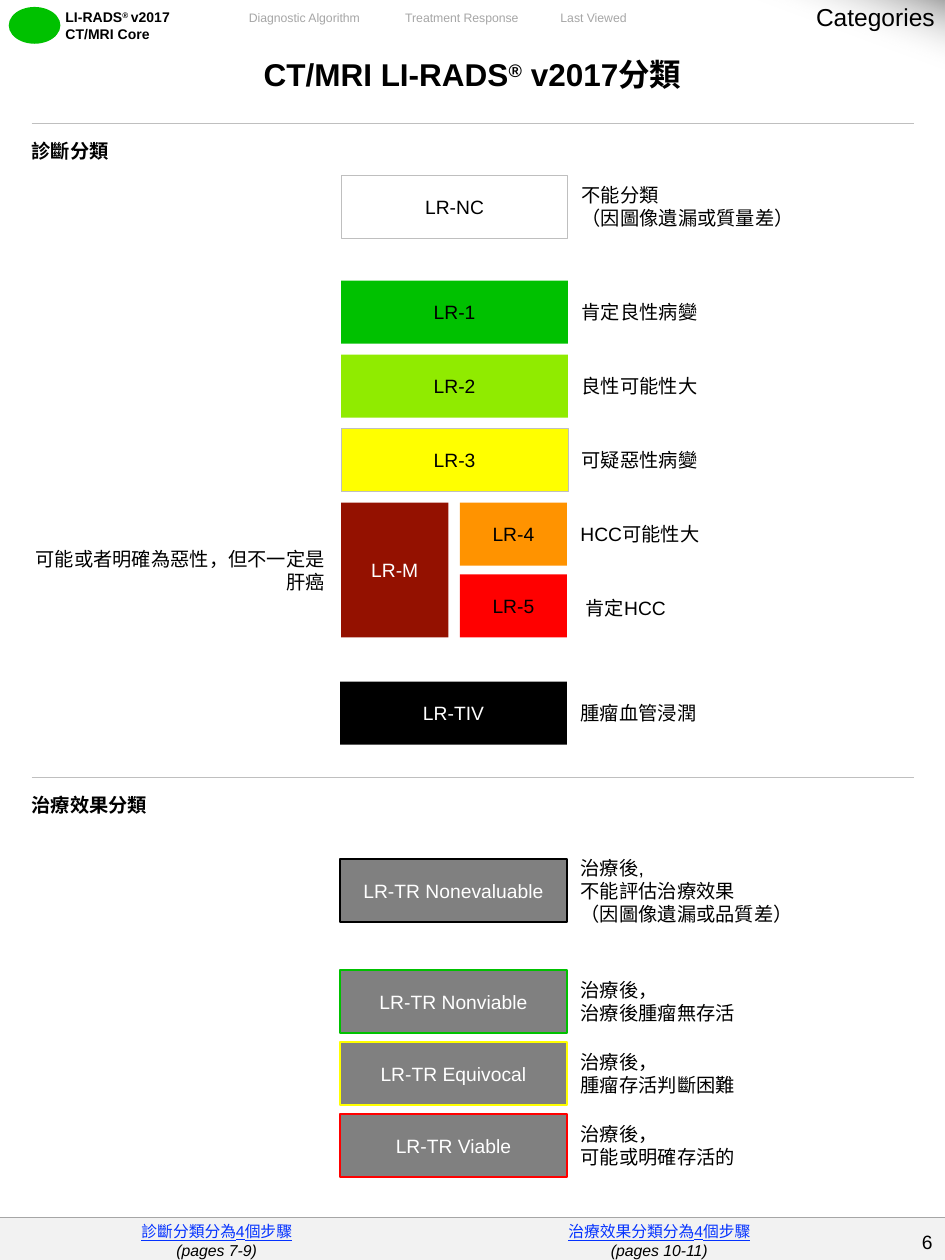
from lxml.etree import SubElement
from pptx import Presentation
from pptx.dml.color import RGBColor
from pptx.enum.shapes import MSO_SHAPE as Shape
from pptx.enum.text import MSO_ANCHOR as Anchor, MSO_AUTO_SIZE as AutoSize, PP_ALIGN as Align
from pptx.oxml import parse_xml
from pptx.oxml.ns import nsdecls, qn
from pptx.util import Pt

BLACK = RGBColor(0x00, 0x00, 0x00)
WHITE = RGBColor(0xFF, 0xFF, 0xFF)
RULE = RGBColor(0xBF, 0xBF, 0xBF)
SILVER = RGBColor(0xA6, 0xA6, 0xA6)
PALE = RGBColor(0xF2, 0xF2, 0xF2)
GRAY = RGBColor(0x80, 0x80, 0x80)
GREEN = RGBColor(0x00, 0xC1, 0x00)
LIME = RGBColor(0x90, 0xEB, 0x00)
YELLOW = RGBColor(0xFF, 0xFF, 0x00)
ORANGE = RGBColor(0xFF, 0x93, 0x00)
RED = RGBColor(0xFF, 0x00, 0x00)
MAROON = RGBColor(0x94, 0x11, 0x00)
LINK = RGBColor(0x04, 0x32, 0xFF)

LATIN, EAST_ASIAN = "Arial", "Noto Sans CJK SC"
NO_GRID_STYLE = "{2D5ABB26-0587-4C30-8999-92F81FD0307C}"
DEFAULT_INSETS = (7.2, 3.6, 7.2, 3.6)
SIDE_INSETS = (7.2, 0, 7.2, 0)
NO_INSETS = (0, 0, 0, 0)

BAR_LEFT, BAR_WIDTH, BAR_HEIGHT = 195, 129.6, 36
HALF_WIDTH, NOTE_WIDTH = 61.2, 208.8


def add_span(para, text, size, color=BLACK, bold=False, italic=False, underline=False, raised=False):
    """Append one formatted run to a paragraph."""
    span = para.add_run()
    span.text = text
    font = span.font
    font.name, font.size, font.bold, font.italic = LATIN, Pt(size), bold, italic
    font.underline = underline
    font.color.rgb = color
    properties = span._r.get_or_add_rPr()
    SubElement(properties, qn("a:ea")).set("typeface", EAST_ASIAN)
    if raised:
        properties.set("baseline", "30000")


def write_lines(frame, lines, size, align=Align.LEFT, **style):
    """Fill a text frame with paragraphs, each a list of texts or (text, style) pairs."""
    for index, line in enumerate(lines):
        para = frame.add_paragraph() if index else frame.paragraphs[0]
        para.alignment = align
        for part in line:
            text, extra = (part, {}) if isinstance(part, str) else part
            add_span(para, text, size, **{**style, **extra})


def set_insets(target, insets):
    """Set the four inner margins of a text frame or table cell."""
    target.margin_left, target.margin_top, target.margin_right, target.margin_bottom = map(Pt, insets)


def add_text(page, box, lines, size=11, anchor=Anchor.MIDDLE, insets=SIDE_INSETS, wrap=True, **style):
    """Add a text box."""
    frame = page.shapes.add_textbox(*map(Pt, box)).text_frame
    frame.word_wrap, frame.vertical_anchor = wrap, anchor
    set_insets(frame, insets)
    write_lines(frame, lines, size, **style)


def add_bar(page, box, text, fill, color=BLACK, line=None, weight=0.5, align=Align.CENTER, insets=NO_INSETS):
    """Add a filled rectangle with a one-line label."""
    bar = page.shapes.add_shape(Shape.RECTANGLE, *map(Pt, box))
    bar.shadow.inherit = False
    bar.fill.solid()
    bar.fill.fore_color.rgb = fill
    if line is None:
        bar.line.fill.background()
    else:
        bar.line.color.rgb, bar.line.width = line, Pt(weight)
    frame = bar.text_frame
    frame.word_wrap, frame.vertical_anchor = True, Anchor.MIDDLE
    set_insets(frame, insets)
    write_lines(frame, [[text]], 11, align, color=color)


def add_plain_table(page, box, widths, heights):
    """Add a table without style, sized by its columns and rows."""
    holder = page.shapes.add_table(len(heights), len(widths), *map(Pt, box))
    holder.element.find(".//" + qn("a:tableStyleId")).text = NO_GRID_STYLE
    table = holder.table
    table.first_row = table.horz_banding = False
    for column, width in zip(table.columns, widths):
        column.width = Pt(width)
    for row, height in zip(table.rows, heights):
        row.height = Pt(height)
    return table


def add_border(cell, side, color, width):
    """Draw one border of a table cell; call before setting the fill."""
    cell._tc.get_or_add_tcPr().append(parse_xml(
        f'<a:{side} {nsdecls("a")} w="{Pt(width)}"><a:solidFill><a:srgbClr val="{color}"/></a:solidFill></a:{side}>'))


def add_header(page, box):
    """Place the emblem, document name, navigation and section title."""
    left, top, width, height = box
    emblem = page.shapes.add_shape(Shape.OVAL, Pt(left + 5), Pt(top + 4), Pt(29.5), Pt(21))
    emblem.shadow.inherit = False
    emblem.fill.solid()
    emblem.fill.fore_color.rgb = GREEN
    emblem.line.fill.background()
    add_text(page, (left + 32.4, top + 2.2, 93, 24.5),
             [["LI-RADS", ("® ", {"raised": True}), "v2017"], ["CT/MRI Core"]],
             8, Anchor.TOP, (5, 2.9, 5, 2.9), bold=True)
    for offset, span, text in ((132.5, 82.8, "Diagnostic Algorithm"), (222.5, 82.8, "Treatment Response"),
                               (311.8, 54.7, "Last Viewed")):
        add_text(page, (left + offset, top + 2.2, span, 15.8), [[text]], 7,
                 insets=DEFAULT_INSETS, wrap=False, align=Align.CENTER, color=SILVER)

    corner = page.shapes.add_shape(Shape.RIGHT_TRIANGLE, Pt(left + width - 108.7), Pt(top), Pt(108.7), Pt(height))
    corner.rotation = 180
    corner.shadow.inherit = False
    corner.line.fill.background()
    corner.element.spPr.find(qn("a:prstGeom")).addnext(parse_xml(
        f'<a:gradFill {nsdecls("a")} rotWithShape="1"><a:gsLst>'
        f'<a:gs pos="0"><a:srgbClr val="{SILVER}"/></a:gs>'
        f'<a:gs pos="50000"><a:srgbClr val="{WHITE}"><a:alpha val="0"/></a:srgbClr></a:gs>'
        f'</a:gsLst><a:lin ang="{290 * 60000}" scaled="0"/></a:gradFill>'))

    title = page.shapes.title
    title.left, title.top, title.width, title.height = map(Pt, (left + width - 149.8, top - 2.2, 151.2, 24.5))
    frame = title.text_frame
    frame.auto_size, frame.vertical_anchor = AutoSize.NONE, Anchor.TOP
    set_insets(frame, DEFAULT_INSETS)
    write_lines(frame, [["Categories"]], 14, Align.RIGHT)
    title.element.getparent().append(title.element)


def add_sections(page, box):
    """Place the ruled table with the heading and both section names."""
    heights = (41.8, 373.7, 41.8)
    table = add_plain_table(page, box, (box[2],), heights)
    rows = (
        (["CT/MRI LI-RADS", ("®", {"raised": True}), " v2017", "分類"], 18, Align.CENTER, (7.2, 0, 7.2, 10.8)),
        (["診斷分類"], 11, Align.LEFT, (0, 7.2, 0, 0)),
        (["治療效果分類"], 11, Align.LEFT, (0, 7.2, 0, 0)),
    )
    for index, (line, size, align, insets) in enumerate(rows):
        cell = table.cell(index, 0)
        set_insets(cell, insets)
        write_lines(cell.text_frame, [line], size, align, bold=True)
        if index:
            add_border(cell, "lnT", RULE, 0.5)
        if index < len(rows) - 1:
            add_border(cell, "lnB", RULE, 0.5)


def add_category(page, left, top, name, note, fill, **style):
    """Place a full-width category bar with its explanation on the right."""
    add_text(page, (left + BAR_WIDTH + 0.7, top, NOTE_WIDTH, BAR_HEIGHT), [[line] for line in note])
    add_bar(page, (left, top, BAR_WIDTH, BAR_HEIGHT), name, fill, **style)


def add_diagnostic(page, left, top):
    """Place the diagnostic categories."""
    pitch = 42.3
    graded = top + 60.3
    split = graded + 3 * pitch
    add_category(page, left, top, "LR-NC", ["不能分類", "（因圖像遺漏或質量差）"], WHITE, line=RULE)
    levels = (("LR-1", "肯定良性病變", GREEN, None), ("LR-2", "良性可能性大", LIME, None),
              ("LR-3", "可疑惡性病變", YELLOW, RULE))
    for index, (name, note, fill, line) in enumerate(levels):
        add_category(page, left, graded + index * pitch, name, [note], fill, line=line, weight=0.25)

    add_bar(page, (10.8, split, 182.2, 77), "可能或者明確為惡性，但不一定是肝癌", WHITE,
            align=Align.RIGHT, insets=SIDE_INSETS)
    add_bar(page, (left, split, HALF_WIDTH, 77), "LR-M", MAROON, color=WHITE)
    right = left + BAR_WIDTH - HALF_WIDTH - 0.6
    for offset, name, fill in ((0, "LR-4", ORANGE), (41, "LR-5", RED)):
        add_bar(page, (right, split + offset, HALF_WIDTH, BAR_HEIGHT), name, fill)
    for indent, offset, note in ((0, 0, ["HCC", "可能性大"]), (2.9, 42, ["肯定", "HCC"])):
        add_text(page, (left + BAR_WIDTH + indent, split + offset, NOTE_WIDTH, BAR_HEIGHT), [note])
    add_category(page, left - 0.6, top + 289.4, "LR-TIV", ["腫瘤血管浸潤"], BLACK, color=WHITE)


def add_treatment(page, left, top):
    """Place the treatment response categories."""
    categories = (
        (0, "LR-TR Nonevaluable", ["治療後,", "不能評估治療效果", "（因圖像遺漏或品質差）"], BLACK),
        (63.4, "LR-TR Nonviable", ["治療後，", "治療後腫瘤無存活"], GREEN),
        (104.5, "LR-TR Equivocal", ["治療後，", "腫瘤存活判斷困難"], YELLOW),
        (145.6, "LR-TR Viable", ["治療後，", "可能或明確存活的"], RED),
    )
    for offset, name, note, line in categories:
        add_category(page, left, top + offset, name, note, GRAY, color=WHITE, line=line, weight=1.5)


def add_footer(page, box):
    """Place the footer table and the page number."""
    left, top, width, height = box
    table = add_plain_table(page, box, (247.7, 258.1, 34.2), (height,))
    texts = (("診斷分類分為4個步驟", "(pages 7-9)"), ("治療效果分類分為4個步驟", "(pages 10-11)"), None)
    for index, text in enumerate(texts):
        cell = table.cell(0, index)
        add_border(cell, "lnT", SILVER, 0.25)
        cell.fill.solid()
        cell.fill.fore_color.rgb = PALE
        cell.vertical_anchor = Anchor.MIDDLE
        set_insets(cell, (7.2, 1.4, 7.2, 1.4) if text else NO_INSETS)
        if text:
            steps, pages = text
            write_lines(cell.text_frame, [[(steps, {"color": LINK, "underline": True})],
                                          [(pages, {"italic": True})]], 9, Align.CENTER)
    add_text(page, (left + width - 35.3, top + 3.6, 35.3, 20.9), [["6"]],
             insets=DEFAULT_INSETS, wrap=False, align=Align.RIGHT)


def main():
    """Build the categories page."""
    deck = Presentation()
    deck.slide_width, deck.slide_height = Pt(540), Pt(720)
    page = deck.slides.add_slide(deck.slide_layouts[5])
    add_header(page, (0, 0, 540, 39.6))
    add_sections(page, (18, 28.8, 504, 457.3))
    add_diagnostic(page, BAR_LEFT, 100.1)
    add_treatment(page, BAR_LEFT - 0.6, 491)
    add_footer(page, (0, 695.5, 540, 24.5))
    deck.save("out.pptx")


if __name__ == "__main__":
    main()
